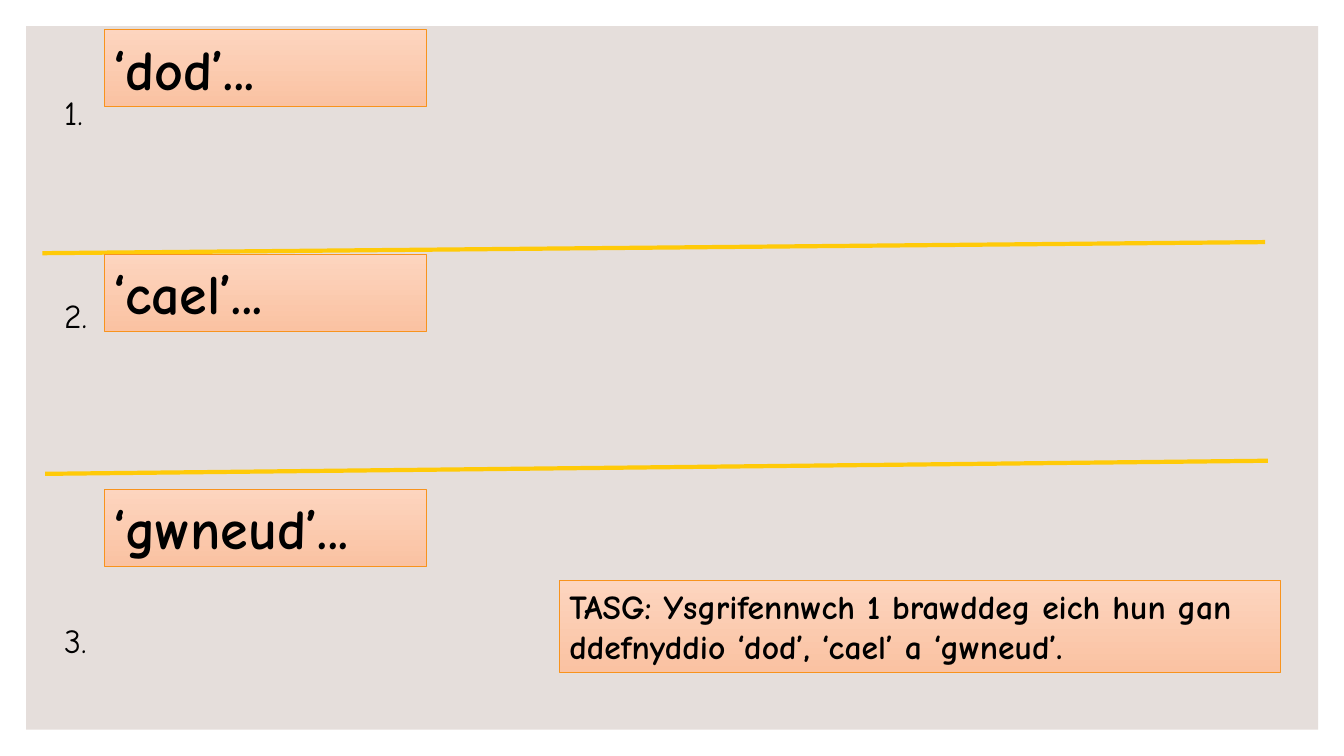
from lxml import etree
from pptx import Presentation
from pptx.dml.color import RGBColor
from pptx.enum import shapes, text
from pptx.oxml.ns import qn
from pptx.util import Cm, Pt

FONT = "Comic Neue"
BLACK = RGBColor(0x00, 0x00, 0x00)
STONE = RGBColor(0xE5, 0xDE, 0xDB)
PEACH = RGBColor(0xFD, 0xD5, 0xBF)
CORAL = RGBColor(0xFA, 0xC2, 0xA2)
ORANGE = RGBColor(0xF8, 0x93, 0x1D)
GOLD = RGBColor(0xFF, 0xCA, 0x08)

deck = Presentation()
deck.slide_width, deck.slide_height = Cm(33.87), Cm(19.05)
slide = deck.slides.add_slide(deck.slide_layouts[6])


def write(para, words, size=24, bold=False, gap=0):
    para.alignment = text.PP_ALIGN.LEFT
    para.space_before = Pt(gap)
    run = para.add_run()
    run.text = words
    run.font.name = FONT
    run.font.size = Pt(size)
    run.font.bold = bold
    run.font.color.rgb = BLACK


def add_rect(left, top, width, height):
    rect = slide.shapes.add_shape(
        shapes.MSO_SHAPE.RECTANGLE, Cm(left), Cm(top), Cm(width), Cm(height))
    rect.shadow.inherit = False
    return rect


# Background panel
panel = add_rect(0.66, 0.66, 32.56, 17.73)
panel.fill.solid()
panel.fill.fore_color.rgb = STONE
panel.line.fill.background()

# Numbers, spaced down the left side
box = slide.shapes.add_textbox(Cm(1.37), Cm(2.2), Cm(1.24), Cm(13.6))
box.text_frame.word_wrap = False
for num, gap in enumerate((0, 116, 203), start=1):
    frame = box.text_frame
    para = frame.paragraphs[0] if num == 1 else frame.add_paragraph()
    write(para, f"{num}.", gap=gap)

# Dividers between the three verbs
for x1, y1, x2, y2 in ((1.07, 6.38, 31.88, 6.1), (1.14, 11.94, 31.95, 11.61)):
    rule = slide.shapes.add_connector(
        shapes.MSO_CONNECTOR.STRAIGHT, Cm(x1), Cm(y1), Cm(x2), Cm(y2))
    rule.line.color.rgb = GOLD
    rule.line.width = Pt(3)
    etree.SubElement(rule._element.spPr, qn("a:effectLst"))

# Verb cards and the task card
verb = (8.13, 1.95, 40)
cards = (
    ("‘dod’...", 2.62, 0.74, *verb),
    ("‘cael’...", 2.62, 6.4, *verb),
    ("‘gwneud’...", 2.62, 12.32, *verb),
    ("TASG: Ysgrifennwch 1 brawddeg eich hun gan ddefnyddio ‘dod’, ‘cael’ a ‘gwneud’.",
     14.1, 14.63, 18.16, 2.31, 24),
)
for words, left, top, width, height, size in cards:
    card = add_rect(left, top, width, height)
    card.fill.gradient()
    card.fill.gradient_angle = 270
    for stop, tone in zip(card.fill.gradient_stops, (PEACH, CORAL)):
        stop.color.rgb = tone
    card.line.color.rgb = ORANGE
    card.line.width = Pt(0.5)
    card.text_frame.word_wrap = True
    card.text_frame.vertical_anchor = text.MSO_ANCHOR.TOP
    write(card.text_frame.paragraphs[0], words, size=size, bold=True)

deck.save("out.pptx")
